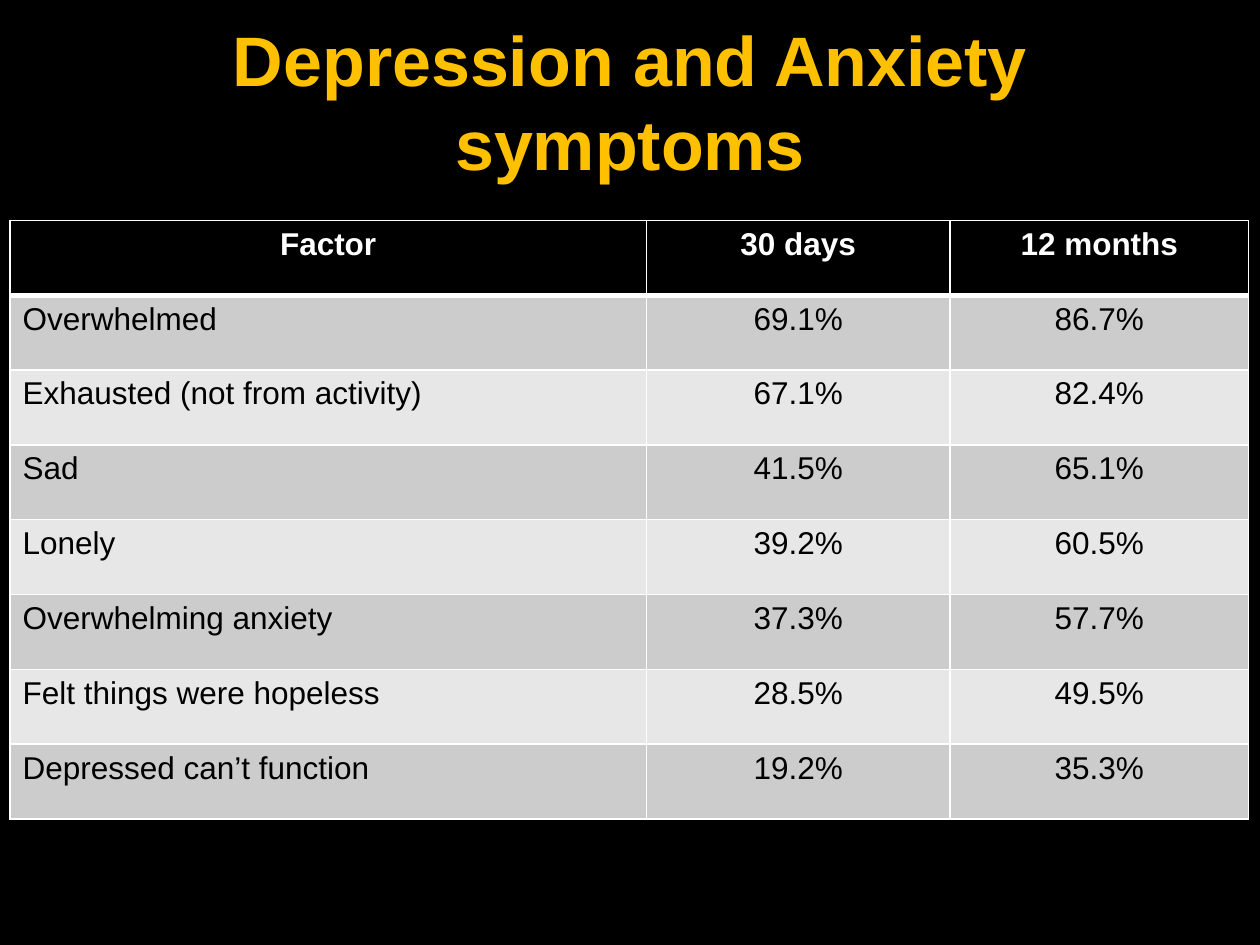
from dataclasses import dataclass

from lxml.etree import SubElement
from pptx import Presentation
from pptx.dml.color import RGBColor as RGB
from pptx.enum.text import MSO_ANCHOR as Anchor, PP_ALIGN as Align
from pptx.oxml.ns import qn
from pptx.util import Inches, Pt


@dataclass(frozen=True)
class Theme:
    font: str = "Arial"
    title_size: int = 40
    table_size: int = 18
    background: str = "000000"
    title: str = "FFC000"
    header_text: str = "FFFFFF"
    body_text: str = "000000"
    header_fill: str = "000000"
    bands: tuple = ("CCCCCC", "E7E7E7")
    rule: str = "FFFFFF"
    thin: int = 1
    thick: int = 3


theme = Theme()


def write(paragraph, wording, size, color, bold, align):
    paragraph.alignment = align
    run = paragraph.add_run()
    run.text = wording
    run.font.name = theme.font
    run.font.size = Pt(size)
    run.font.bold = bold
    run.font.color.rgb = RGB.from_string(color)


def rule_cell(cell, top, bottom):
    """Draw the four borders; the schema wants them ahead of the fill."""
    properties = cell._tc.get_or_add_tcPr()
    widths = {"a:lnL": theme.thin, "a:lnR": theme.thin, "a:lnT": top, "a:lnB": bottom}
    for position, (side, width) in enumerate(widths.items()):
        border = SubElement(properties, qn(side), w=str(Pt(width)))
        fill = SubElement(border, qn("a:solidFill"))
        SubElement(fill, qn("a:srgbClr"), val=theme.rule)
        properties.insert(position, border)


prs = Presentation()
prs.slide_width, prs.slide_height = Inches(10), Inches(7.5)
slide = prs.slides.add_slide(prs.slide_layouts[6])
slide.background.fill.solid()
slide.background.fill.fore_color.rgb = RGB.from_string(theme.background)

heading = slide.shapes.add_textbox(Inches(0.5), Inches(0.17), Inches(9), Inches(1.25)).text_frame
heading.word_wrap = True
heading.vertical_anchor = Anchor.MIDDLE
write(heading.paragraphs[0], "Depression and Anxiety symptoms",
      theme.title_size, theme.title, True, Align.CENTER)

symptoms = [
    ("Factor", "30 days", "12 months"),
    ("Overwhelmed", "69.1%", "86.7%"),
    ("Exhausted (not from activity)", "67.1%", "82.4%"),
    ("Sad", "41.5%", "65.1%"),
    ("Lonely", "39.2%", "60.5%"),
    ("Overwhelming anxiety", "37.3%", "57.7%"),
    ("Felt things were hopeless", "28.5%", "49.5%"),
    ("Depressed can’t function", "19.2%", "35.3%"),
]
column_widths = (5.05, 2.41, 2.37)
table = slide.shapes.add_table(
    len(symptoms), len(column_widths), Inches(0.08), Inches(1.75),
    Inches(sum(column_widths)), Inches(4.75)).table
for column, width in zip(table.columns, column_widths):
    column.width = Inches(width)

for r, record in enumerate(symptoms):
    is_header = r == 0
    fill_color = theme.header_fill if is_header else theme.bands[(r - 1) % 2]
    text_color = theme.header_text if is_header else theme.body_text
    top = theme.thick if r == 1 else theme.thin
    bottom = theme.thick if is_header else theme.thin
    for c, wording in enumerate(record):
        cell = table.cell(r, c)
        cell.fill.solid()
        cell.fill.fore_color.rgb = RGB.from_string(fill_color)
        rule_cell(cell, top, bottom)
        align = Align.CENTER if is_header or c > 0 else Align.LEFT
        write(cell.text_frame.paragraphs[0], wording,
              theme.table_size, text_color, is_header, align)

prs.save("out.pptx")
